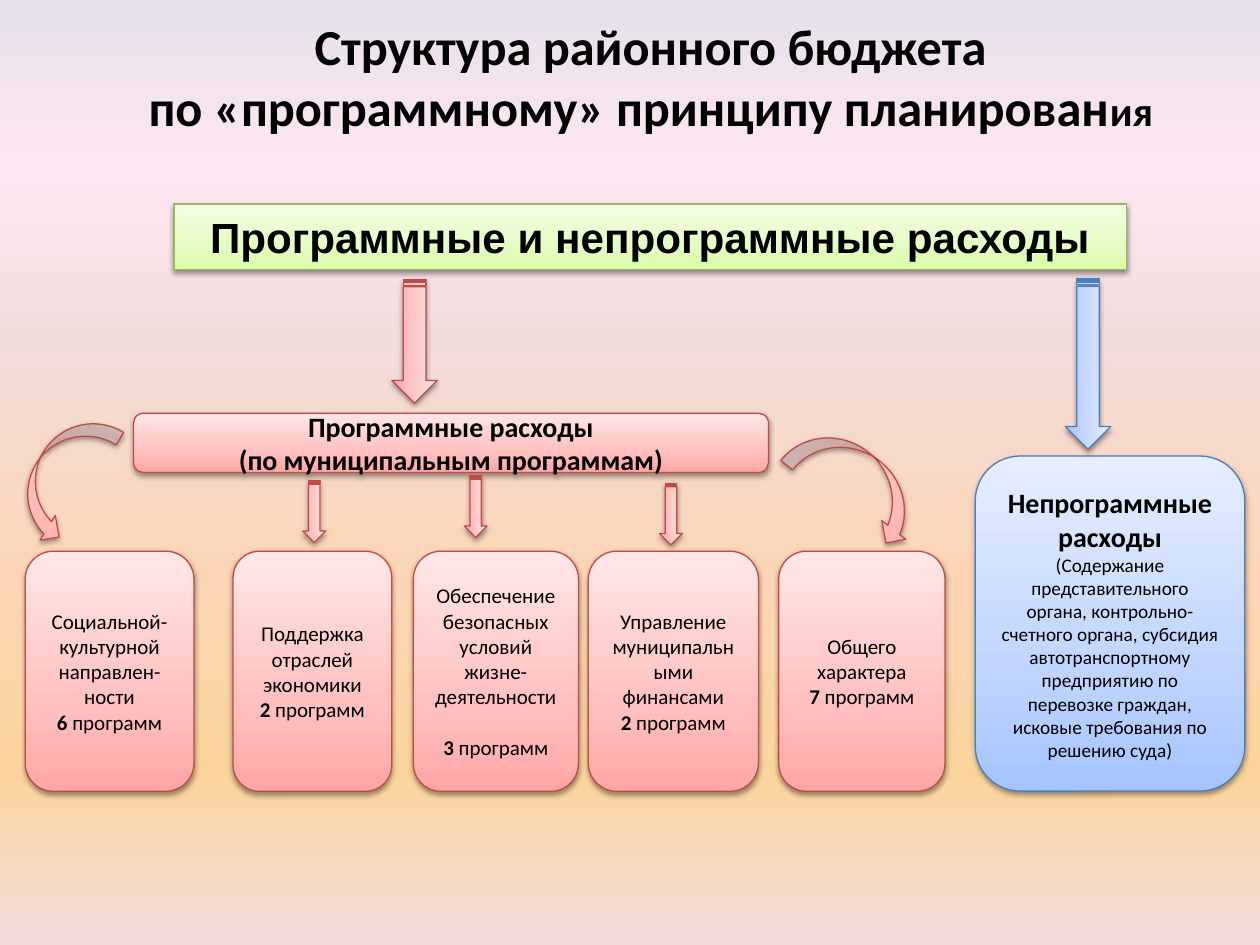
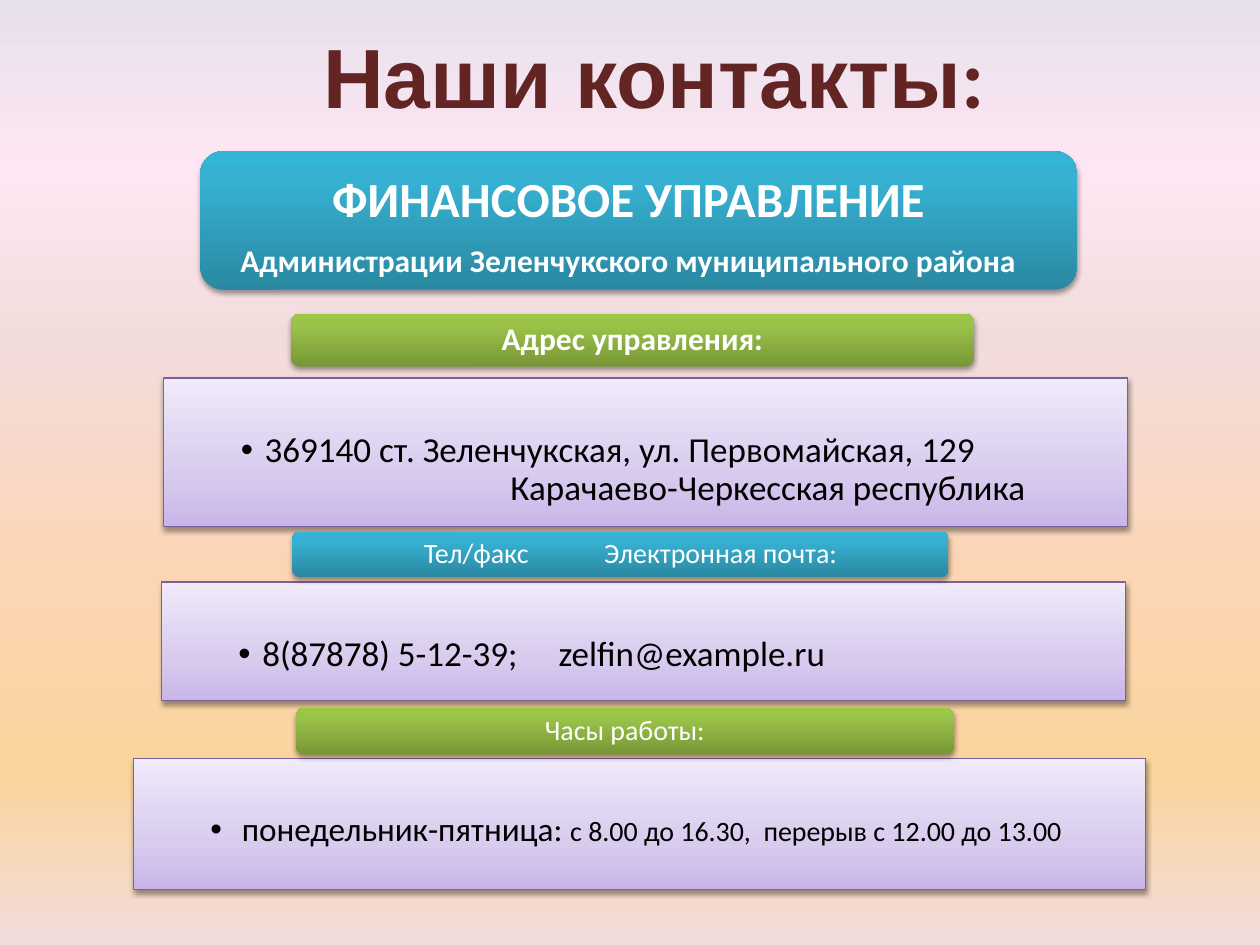
"""Builds two slides: the programme structure of a district budget and its contacts."""
from lxml.etree import SubElement
from pptx import Presentation
from pptx.dml.color import RGBColor
from pptx.enum.shapes import MSO_SHAPE as SHAPE
from pptx.enum.text import MSO_ANCHOR as ANCHOR, MSO_AUTO_SIZE as AUTO, PP_ALIGN as ALIGN
from pptx.oxml.ns import qn
from pptx.util import Pt

COLORS = {"black": "000000", "white": "FFFFFF", "maroon": "632523", "red line": "BF4C48",
          "blue line": "4B7EBC", "green line": "98B955", "purple line": "7D60A0"}
BACKGROUND = [(0, "E6E0EC"), (18, "FEE7F2"), (36, "F2DCDB"),
              (61, "FCD5B5"), (82, "FBD49C"), (100, "F2DCDB")]
GRADIENTS = {
    "red": [(0, "FFA6A5"), (35, "FFC0BF"), (100, "FFE7E7")],
    "blue": [(0, "A4C4FF"), (35, "BFD4FF"), (100, "E6EEFF")],
    "green": [(0, "DAFDA7"), (35, "E4FCC2"), (100, "F5FFE7")],
    "purple": [(0, "C9B5E8"), (35, "D8CBEE"), (100, "F0EAF9")],
    "olive": [(0, "779737"), (80, "9BC348"), (100, "9DC746")],
    "teal": [(0, "2A88A2"), (80, "37B1D2"), (100, "34B4D6")],
}

STRUCTURE_TITLE = [[("Структура районного бюджета\vпо «программному» принципу планирован",
                     {"size": 28.8, "bold": True}), ("ия", {"size": 23.4, "bold": True})]]
EXPENSES = "Программные и непрограммные расходы"
PROGRAMME = ["Программные расходы", "(по муниципальным программам)"]
NON_PROGRAMME = ("Непрограммные расходы ",
                 "(Содержание представительного органа, контрольно-счетного органа, "
                 "субсидия автотранспортному предприятию по перевозке граждан, "
                 "исковые требования по решению суда)")
DIRECTIONS = [
    (14.4, 96.5, "Социальной-культурной направлен-ности", "6", 0),
    (133.2, 90.7, "Поддержка отраслей экономики", "2", 0),
    (236.2, 94.3, "Обеспечение безопасных условий жизне-деятельности", "3", 14.6),
    (336.2, 97.2, "Управление муниципальными финансами", "2", 0),
    (445, 95, "Общего характера", "7", 0),
]
DOWN_ARROWS = [(236.9, 159.8, 70.6, 26, "red"), (621.7, 159.5, 97.2, 26, "blue"),
               (179.6, 274.7, 35.3, 13, "red"), (271.8, 271.8, 35.3, 13, "red"),
               (383.4, 276.1, 35.3, 13, "red")]
CURVED_ARROWS = [(SHAPE.CURVED_RIGHT_ARROW, (19.4, 232.6, 33.1, 78.5), 31.7),
                 (SHAPE.CURVED_LEFT_ARROW, (473, 233.3, 34.6, 85), 308.1)]

CONTACTS_TITLE = [[("Наши контакты", {"size": 48, "name": "Arial", "bold": True, "color": "maroon"}),
                   (":", {"size": 48, "bold": True, "color": "maroon"})]]
OFFICE = [[("ФИНАНСОВОЕ УПРАВЛЕНИЕ", {"size": 28, "bold": True, "color": "white"})],
          [("Администрации Зеленчукского муниципального района",
            {"size": 18, "bold": True, "color": "white"})]]
BARS = [
    ((166.3, 179.3, 390.2, 30.2), "olive", "Адрес управления:", {"size": 18, "bold": True}),
    ((167, 303.8, 375.1, 26), "teal", "Тел/факс\tЭлектронная почта:", {"size": 16}),
    ((169.2, 404.6, 375.8, 26.6), "olive", "Часы работы:", {"size": 16}),
]
CARDS = [
    ((93.6, 216, 550.8, 85), [[("369140 ст. Зеленчукская, ул. Первомайская, 129", {"size": 20})],
                              [("Карачаево-Черкесская республика", {"size": 20})]]),
    ((92.2, 332.6, 550.8, 67.7), [[("8(87878) 5-12-39;\tzelfin@example.ru", {"size": 20})]]),
    ((76.3, 433.4, 578.2, 74.9), [[(" понедельник-пятница: ", {"size": 19}),
                                   ("с 8.00 до 16.30,  перерыв с 12.00 до 13.00", {"size": 16})]]),
]


def assign(obj, fmt):
    for key, value in fmt.items():
        setattr(obj, key, value)


def place(shape, at):
    assign(shape, dict(zip(("left", "top", "width", "height"), map(Pt, at))))


def paint(fill, element, stops, angle):
    fill.gradient()
    grad = element.find(".//" + qn("a:gradFill"))
    grad.find(qn("a:lin")).set("ang", str(angle * 60000))
    gs_list = grad.find(qn("a:gsLst"))
    for gs in list(gs_list):
        gs_list.remove(gs)
    for pos, color in stops:
        gs = SubElement(gs_list, qn("a:gs"), pos=str(pos * 1000))
        SubElement(gs, qn("a:srgbClr"), val=color)


def cast_shadow(sp):
    sp.shadow.inherit = False
    effects = sp._element.spPr.find(qn("a:effectLst"))
    shadow = SubElement(effects, qn("a:outerShdw"), blurRad=str(Pt(3.1)), dist=str(Pt(1.6)),
                        dir="5400000", rotWithShape="0")
    color = SubElement(shadow, qn("a:srgbClr"), val=COLORS["black"])
    SubElement(color, qn("a:alpha"), val="38000")


def write(sp, paragraphs, insets=(7.2, 3.6, 7.2, 3.6), anchor=ANCHOR.MIDDLE, **layout):
    tf = sp.text_frame
    sides = ("margin_left", "margin_top", "margin_right", "margin_bottom")
    assign(tf, {"word_wrap": True, "auto_size": AUTO.NONE, "vertical_anchor": anchor,
                **dict(zip(sides, map(Pt, insets)))})
    for i, runs in enumerate(paragraphs):
        p = tf.paragraphs[0] if i == 0 else tf.add_paragraph()
        assign(p, {"alignment": ALIGN.CENTER, **layout})
        for text, fmt in runs:
            for j, line in enumerate(text.split("\v")):
                if j:
                    p.add_line_break()
                r = p.add_run()
                r.text = line
                look = {"name": "Calibri", "bold": False, "color": "black", **fmt}
                r.font.color.rgb = RGBColor.from_string(COLORS[look.pop("color")])
                assign(r.font, {**look, "size": Pt(look["size"])})
    return tf.paragraphs


def add_block(s, kind, at, gradient, rotation=0):
    sp = s.shapes.add_shape(kind, *map(Pt, at))
    sp.rotation = rotation
    paint(sp.fill, sp._element, GRADIENTS[gradient], 270)
    line = COLORS.get(gradient + " line")
    if line:
        sp.line.color.rgb = RGBColor.from_string(line)
        sp.line.width = Pt(0.75)
    else:
        sp.line.fill.background()
    cast_shadow(sp)
    return sp


def add_slide(prs, title, at):
    s = prs.slides.add_slide(prs.slide_layouts[5])
    place(s.shapes.title, at)
    write(s.shapes.title, title)
    return s


def indent(p, left, bullet=False):
    pPr = p._p.get_or_add_pPr()
    pPr.set("marL", str(Pt(left)))
    pPr.set("indent", str(Pt(-left if bullet else 0)))
    if bullet:
        SubElement(pPr, qn("a:buFont"), typeface="Arial")
        SubElement(pPr, qn("a:buChar"), char="•")


def add_tab(p, pos):
    tabs = SubElement(p._p.get_or_add_pPr(), qn("a:tabLst"))
    SubElement(tabs, qn("a:tab"), pos=str(Pt(pos)), algn="l")


def build_structure(prs):
    s = add_slide(prs, STRUCTURE_TITLE, (54, 9.4, 635.8, 67.7))
    sp = add_block(s, SHAPE.RECTANGLE, (99.4, 116.6, 544.3, 37.4), "green")
    write(sp, [[(EXPENSES, {"size": 24.1, "name": "Arial", "bold": True})]])
    sp = add_block(s, SHAPE.ROUNDED_RECTANGLE, (557.3, 260.6, 154.1, 191.5), "blue")
    heading, details = NON_PROGRAMME
    write(sp, [[(heading, {"size": 16, "bold": True}), (details, {"size": 11})]])
    sp = add_block(s, SHAPE.ROUNDED_RECTANGLE, (76.3, 236.2, 362.9, 33.8), "red")
    write(sp, [[(text, {"size": 16, "bold": True})] for text in PROGRAMME])
    for left, width, name, count, gap in DIRECTIONS:
        sp = add_block(s, SHAPE.ROUNDED_RECTANGLE, (left, 315, width, 137.2), "red")
        ps = write(sp, [[(name, {"size": 12})],
                        [(count, {"size": 12, "bold": True}), (" программ", {"size": 12})]])
        ps[1].space_before = Pt(gap)
    for center, top, length, width, gradient in DOWN_ARROWS:
        at = (center - length / 2, top + (length - width) / 2, length, width)
        add_block(s, SHAPE.STRIPED_RIGHT_ARROW, at, gradient, 90)
    for kind, at, rotation in CURVED_ARROWS:
        add_block(s, kind, at, "red", rotation)


def build_contacts(prs):
    s = add_slide(prs, CONTACTS_TITLE, (81.4, 10.1, 584.6, 65.5))
    sp = add_block(s, SHAPE.ROUNDED_RECTANGLE, (114.5, 86.4, 501.1, 79.2), "teal")
    ps = write(sp, OFFICE, (10, 8, 22, 0), line_spacing=0.9)
    ps[0].space_after = Pt(9.8)
    for at, paragraphs in CARDS:
        sp = add_block(s, SHAPE.RECTANGLE, at, "purple")
        first, *rest = write(sp, paragraphs, (44, 31, 44, 10.8), ANCHOR.TOP,
                             alignment=ALIGN.LEFT, line_spacing=0.9)
        indent(first, 13.7, bullet=True)
        if "\t" in first.text:
            add_tab(first, 183)
        for p in rest:
            indent(p, 154)
    for at, gradient, text, fmt in BARS:
        sp = add_block(s, SHAPE.ROUNDED_RECTANGLE, at, gradient)
        tabbed = "\t" in text
        p, = write(sp, [[(text, {**fmt, "color": "white"})]], (74 if tabbed else 15, 0, 15, 0),
                   alignment=ALIGN.LEFT if tabbed else ALIGN.CENTER, line_spacing=0.9)
        if tabbed:
            add_tab(p, 103)


def main():
    prs = Presentation()
    assign(prs, {"slide_width": Pt(720), "slide_height": Pt(540)})
    master = prs.slide_master
    paint(master.background.fill, master._element, BACKGROUND, 90)
    build_structure(prs)
    build_contacts(prs)
    prs.save("out.pptx")


if __name__ == "__main__":
    main()
